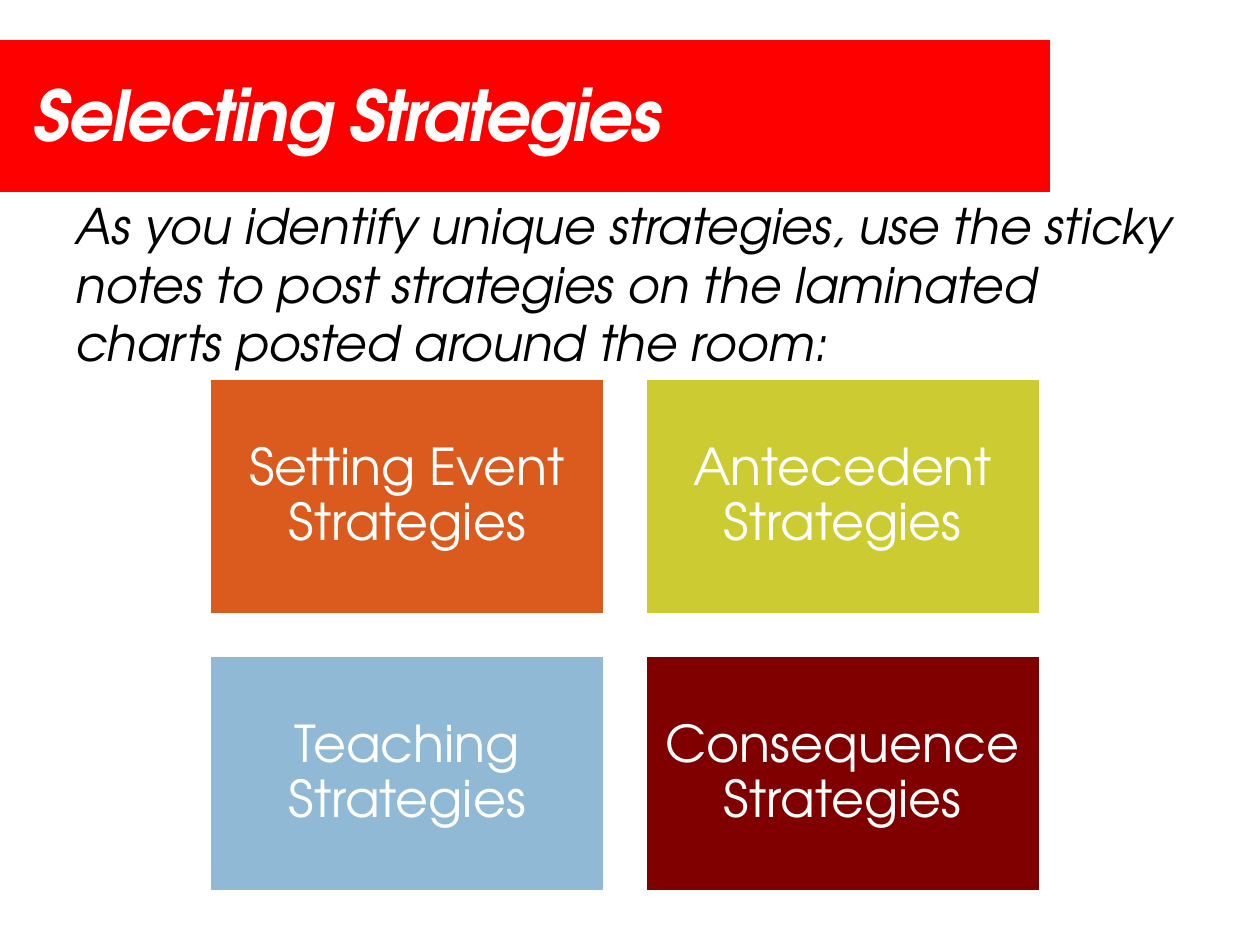
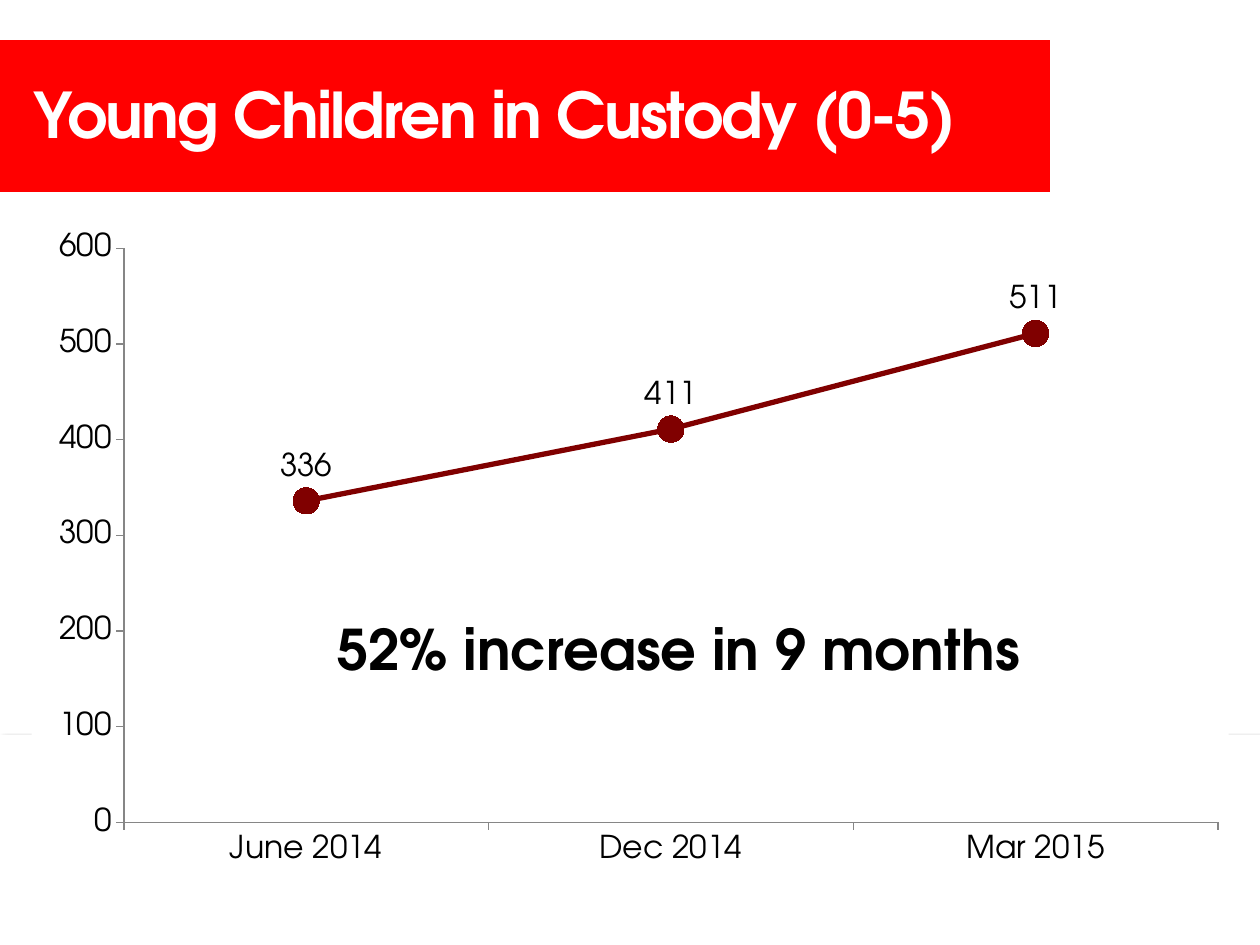
from pptx import Presentation
from pptx.chart.data import CategoryChartData
from pptx.dml.color import RGBColor
from pptx.enum import chart as ch, shapes, text
from pptx.oxml import parse_xml
from pptx.oxml.ns import nsdecls, qn
from pptx.util import Cm, Pt

FONT = "TeX Gyre Adventor"
RED = RGBColor(0xFF, 0x00, 0x00)
WHITE = RGBColor(0xFF, 0xFF, 0xFF)
BLACK = RGBColor(0x00, 0x00, 0x00)
GRAY = RGBColor(0x86, 0x86, 0x86)
ORANGE = RGBColor(0xDB, 0x5A, 0x1E)
LIME = RGBColor(0xCC, 0xCB, 0x31)
BLUE = RGBColor(0x8F, 0xB9, 0xD4)
MAROON = RGBColor(0x80, 0x00, 0x00)

TITLE = {"bold": True, "color": WHITE}
TILES = [
    ("Setting Event Strategies", ORANGE),
    ("Antecedent Strategies", LIME),
    ("Teaching Strategies", BLUE),
    ("Consequence Strategies", MAROON),
]
COUNTS = {"June 2014": 336, "Dec 2014": 411, "Mar 2015": 511}


def place(shape, left, top, width, height):
    box = {"left": left, "top": top, "width": width, "height": height}
    for name, value in box.items():
        setattr(shape, name, Cm(value))


def style(font, size, color=BLACK, **form):
    form.update(name=FONT, size=Pt(size))
    for name, value in form.items():
        setattr(font, name, value)
    font.color.rgb = color


def write(frame, words, size, **form):
    """Put one styled run into the frame and return its paragraph."""
    para = frame.paragraphs[0]
    run = para.add_run()
    run.text = words
    style(run.font, size, **form)
    return para


def add_rect(slide, box, fill, edge=None):
    rect = slide.shapes.add_shape(shapes.MSO_SHAPE.RECTANGLE, *map(Cm, box))
    rect.fill.solid()
    rect.fill.fore_color.rgb = fill
    if edge:
        rect.line.color.rgb = WHITE
        rect.line.width = Pt(edge)
    else:
        rect.line.fill.background()
    return rect


def add_band(deck, slide):
    """Draw the title band and move it to the back of the master."""
    band = add_rect(slide, (-0.2, 0.79, 21.39, 3.1), RED, 0.75)
    band.shadow.inherit = False
    deck.slide_master.shapes._spTree.insert(2, band._element)


def set_title(slide, words, size, **form):
    title = slide.shapes.title
    place(title, 0.43, 0.91, 20.75, 2.74)
    frame = title.text_frame
    frame.auto_size = text.MSO_AUTO_SIZE.NONE
    frame.vertical_anchor = text.MSO_ANCHOR.MIDDLE
    para = write(frame, words, size, **TITLE, **form)
    para.alignment = text.PP_ALIGN.LEFT
    para.runs[0].font._element.set("spc", "-100")


def set_body(slide, words):
    body = slide.placeholders[1]
    place(body, 1.27, 3.81, 22.86, 13.54)
    body.text_frame.auto_size = text.MSO_AUTO_SIZE.NONE
    para = write(body.text_frame, words, 28, italic=True)
    props = para._p.get_or_add_pPr()
    props.set("marL", "0")
    props.set("indent", "0")
    props.append(parse_xml(f"<a:buNone {nsdecls('a')}/>"))


def add_tiles(slide):
    left, top, width, height, gap = 4.22, 7.62, 7.98, 4.78, 0.8
    for i, (words, fill) in enumerate(TILES):
        row, col = divmod(i, 2)
        box = (left + col * (width + gap), top + row * (height + gap),
               width, height)
        tile = add_rect(slide, box, fill, 2.08)
        tile.shadow.inherit = False
        frame = tile.text_frame
        frame.word_wrap = True
        for side in ("left", "top", "right", "bottom"):
            setattr(frame, f"margin_{side}", Cm(0.3))
        frame.vertical_anchor = text.MSO_ANCHOR.MIDDLE
        para = write(frame, words, 29, color=WHITE)
        para.alignment = text.PP_ALIGN.CENTER
        para.line_spacing = 0.9


def add_floor(slide):
    """Add the white panel with a soft shadow at the foot of the slide."""
    floor = add_rect(slide, (0, 14.82, 25.4, 4.23), WHITE)
    floor._element.spPr.append(parse_xml(
        f'<a:effectLst {nsdecls("a")}><a:outerShdw blurRad="38100" '
        'dist="25400" dir="2700000" algn="br" rotWithShape="0">'
        '<a:srgbClr val="000000"><a:alpha val="60000"/></a:srgbClr>'
        '</a:outerShdw></a:effectLst>'))


def set_plot(chart, left, top, width, height):
    """Fix the inner plot area and give the chart a white ground."""
    area = chart._chartSpace.chart.plotArea
    for old in area.findall(qn("c:layout")):
        area.remove(old)
    parts = {"x": left, "y": top, "w": width, "h": height}
    sizes = "".join(f'<c:{k} val="{v}"/>' for k, v in parts.items())
    area.insert(0, parse_xml(
        f'<c:layout {nsdecls("c")}><c:manualLayout>'
        '<c:layoutTarget val="inner"/><c:xMode val="edge"/>'
        f'<c:yMode val="edge"/>{sizes}</c:manualLayout></c:layout>'))
    chart._chartSpace.chart.addnext(parse_xml(
        f'<c:spPr {nsdecls("c", "a")}><a:solidFill>'
        f'<a:srgbClr val="{WHITE}"/></a:solidFill>'
        '<a:ln><a:noFill/></a:ln></c:spPr>'))


def add_graph(slide):
    data = CategoryChartData()
    data.categories = list(COUNTS)
    data.add_series("Series 1", list(COUNTS.values()))
    box = map(Cm, (0.64, 4.45, 24.13, 13.54))
    chart = slide.shapes.add_chart(
        ch.XL_CHART_TYPE.LINE_MARKERS, *box, data).chart
    chart.has_title = chart.has_legend = False
    style(chart.font, 18)
    set_plot(chart, 0.077, 0.041, 0.914, 0.855)

    for axis in (chart.category_axis, chart.value_axis):
        axis.has_major_gridlines = False
        axis.major_tick_mark = ch.XL_TICK_MARK.OUTSIDE
        axis.format.line.color.rgb = GRAY
    scale = {"minimum_scale": 0, "maximum_scale": 600, "major_unit": 100}
    for name, value in scale.items():
        setattr(chart.value_axis, name, value)

    plot = chart.plots[0]
    plot.vary_by_categories = False
    plot.has_data_labels = True
    plot.data_labels.show_value = True
    plot.data_labels.position = ch.XL_LABEL_POSITION.ABOVE
    line = plot.series[0]
    line.smooth = False
    line.format.line.color.rgb = MAROON
    line.format.line.width = Pt(3)
    dot = line.marker
    dot.style = ch.XL_MARKER_STYLE.CIRCLE
    dot.size = 15
    dot.format.fill.solid()
    dot.format.fill.fore_color.rgb = MAROON
    dot.format.line.color.rgb = MAROON


def add_note(slide, words):
    note = slide.shapes.add_textbox(*map(Cm, (6.55, 12.27, 14.43, 1.63)))
    note.text_frame.word_wrap = False
    write(note.text_frame, words, 32, bold=True)


def main():
    deck = Presentation()
    deck.slide_width, deck.slide_height = Cm(25.4), Cm(19.05)

    plan = deck.slides.add_slide(deck.slide_layouts[1])
    add_band(deck, plan)
    set_title(plan, "Selecting Strategies", 40, italic=True)
    set_body(plan, "As you identify unique strategies, use the sticky notes "
                   "to post strategies on the laminated charts posted "
                   "around the room:")
    add_tiles(plan)

    trend = deck.slides.add_slide(deck.slide_layouts[5])
    add_floor(trend)
    set_title(trend, "Young Children in Custody (0-5)", 36)
    add_graph(trend)
    add_note(trend, "52% increase in 9 months")

    deck.save("out.pptx")


if __name__ == "__main__":
    main()
